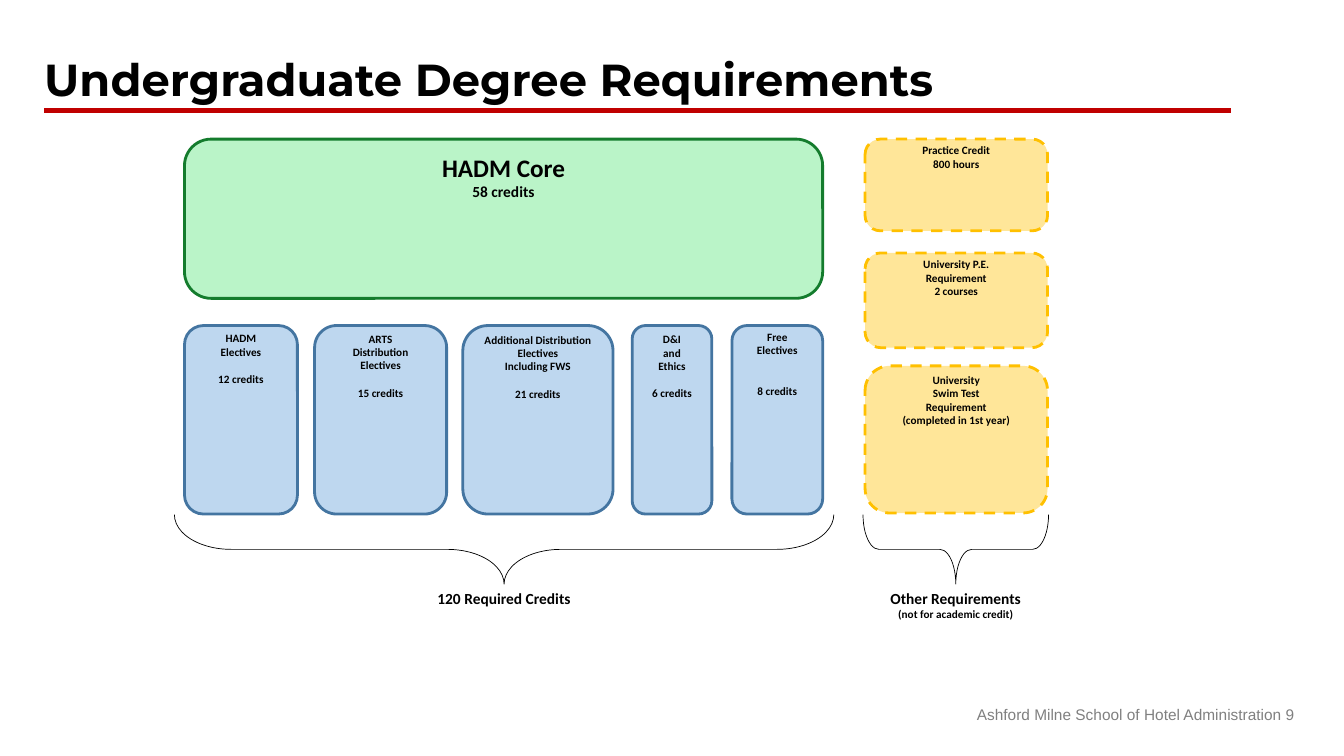
import pptx
import pptx.util
import pptx.dml.color
import pptx.enum.dml
import pptx.enum.shapes
import pptx.enum.text
from lxml import etree

Inches, Pt = pptx.util.Inches, pptx.util.Pt
RGBColor = pptx.dml.color.RGBColor
ALIGN = pptx.enum.text.PP_ALIGN
SHAPE = pptx.enum.shapes.MSO_SHAPE
DASH = pptx.enum.dml.MSO_LINE.DASH

BLACK = RGBColor(0x00, 0x00, 0x00)
WHITE = RGBColor(0xFF, 0xFF, 0xFF)
GRAY = RGBColor(0x80, 0x80, 0x80)
RED = RGBColor(0xC0, 0x00, 0x00)
GREEN_FILL, GREEN_LINE = RGBColor(0xBA, 0xF4, 0xC8), RGBColor(0x14, 0x7C, 0x2D)
BLUE_FILL, BLUE_LINE = RGBColor(0xBE, 0xD7, 0xEF), RGBColor(0x44, 0x75, 0xA1)
YELLOW_FILL, YELLOW_LINE = RGBColor(0xFF, 0xE6, 0x99), RGBColor(0xFF, 0xC0, 0x00)

# Content: a line of text is (text, size, space before in points)
TITLE = "Undergraduate Degree Requirements"
FOOTER = "Ashford Milne School of Hotel Administration 9"
CORE = [("HADM Core", 18, 0), ("58 credits", 11, 0)]
# left, width, text drop, name lines, credits, space above credits
ELECTIVES = [
    (1.83, 1.12, 0.06, ["HADM", "Electives"], "12 credits", 9.8),
    (3.12, 1.31, 0.06, ["ARTS", "Distribution", "Electives"], "15 credits", 9.8),
    (4.59, 1.49, 0.06, ["Additional Distribution", "Electives", "Including FWS"],
     "21 credits", 9.8),
    (6.27, 0.79, 0.07, ["D&I", "and", "Ethics"], "6 credits", 9.8),
    (7.26, 0.90, 0.04, ["Free", "Electives"], "8 credits", 19.6),
]
# top, height, lines
OTHERS = [
    (1.38, 0.91, ["Practice Credit", "800 hours"]),
    (2.51, 0.94, ["University P.E.", "Requirement", "2 courses"]),
    (3.63, 1.46, ["University", "Swim Test", "Requirement", "(completed in 1st year)"]),
]
# centre, width, curvature, caption lines
BRACES = [
    (5.0, 6.54, 0.816, [("120 Required Credits", 11, 0)]),
    (9.48, 1.84, 0.229, [("Other Requirements", 11, 0),
                         ("(not for academic credit)", 8, 0)]),
]

# Layout
CORNER = 0.167
CORNER_INSET = 0.293 * CORNER  # text inset of a rounded corner, per short side
ELECTIVE_TOP, ELECTIVE_HEIGHT = 3.23, 1.87
OTHER_LEFT, OTHER_WIDTH = 8.58, 1.81
BRACE_MIDDLE, BRACE_DEPTH = 5.45, 0.69
CAPTION_TOP, CAPTION_WIDTH, CAPTION_HEIGHT = 5.8, 2.86, 0.88

presentation = pptx.Presentation()
presentation.slide_width, presentation.slide_height = Inches(13.33), Inches(7.5)
slide = presentation.slides.add_slide(presentation.slide_layouts[6])


def apply(target, formats):
    for name, value in formats.items():
        setattr(target, name, value)


def write(shape, lines, align=ALIGN.CENTER, margins=(0, 0.04), **font):
    side, top = margins
    frame = shape.text_frame
    apply(frame, {"word_wrap": True, "vertical_anchor": pptx.enum.text.MSO_ANCHOR.TOP,
                  "margin_left": Inches(side), "margin_right": Inches(side),
                  "margin_top": Inches(top), "margin_bottom": Inches(0.04)})
    for index, (text, size, gap) in enumerate(lines):
        paragraph = frame.add_paragraph() if index else frame.paragraphs[0]
        apply(paragraph, {"alignment": align, "space_before": Pt(gap)})
        run = paragraph.add_run()
        run.text = text
        formats = {"name": "Calibri", "bold": True, "size": Pt(size)} | font
        run.font.color.rgb = formats.pop("color", BLACK)
        apply(run.font, formats)


def add_text(box, lines, **options):
    write(slide.shapes.add_textbox(*map(Inches, box)), lines, **options)


def add_outline(kind, box, fill, line, width, dash=None):
    shape = slide.shapes.add_shape(kind, *map(Inches, box))
    shape.shadow.inherit = False
    shape.fill.solid()
    shape.fill.fore_color.rgb = fill
    shape.line.color.rgb = line
    apply(shape.line, {"width": Pt(width), "dash_style": dash})
    return shape


def add_card(box, fill, line, lines, drop, dash=None):
    card = add_outline(SHAPE.ROUNDED_RECTANGLE, box, fill, line, 2, dash)
    card.adjustments[0] = CORNER
    write(card, lines, margins=(0, max(0, drop - CORNER_INSET * min(box[2:]))))


# Title, rule and footer
add_text((0.34, 0.46, 11, 0.64), [(TITLE, 32, 0)], align=ALIGN.LEFT,
         margins=(0.1, 0.05), name="Montserrat")
rule = slide.shapes.add_connector(pptx.enum.shapes.MSO_CONNECTOR.STRAIGHT,
                                  *map(Inches, (0.44, 1.1, 12.21, 1.1)))
rule.line.color.rgb = RED
rule.line.width = Pt(3.5)
etree.SubElement(rule.element.spPr, pptx.oxml.ns.qn("a:effectLst"))
add_text((4.42, 6.95, 8.52, 0.4), [(FOOTER, 11, 0)], align=ALIGN.RIGHT,
         margins=(0.1, 0.05), name="Arial", bold=False, color=GRAY)

# Braces with captions
for center, width, curvature, caption in BRACES:
    brace = add_outline(SHAPE.LEFT_BRACE,
                        (center - BRACE_DEPTH / 2, BRACE_MIDDLE - width / 2,
                         BRACE_DEPTH, width), WHITE, BLACK, 0.5)
    brace.rotation = 270
    brace.adjustments[0] = curvature
    add_text((center - CAPTION_WIDTH / 2, CAPTION_TOP, CAPTION_WIDTH, CAPTION_HEIGHT),
             caption)

# Credit cards: core, then electives
add_card((1.83, 1.38, 6.33, 1.58), GREEN_FILL, GREEN_LINE, CORE, 0.13)
for left, width, drop, names, credits, gap in ELECTIVES:
    lines = [(name, 8, 0) for name in names] + [(credits, 8, gap)]
    add_card((left, ELECTIVE_TOP, width, ELECTIVE_HEIGHT), BLUE_FILL, BLUE_LINE,
             lines, drop)

# Requirements without credit
for top, height, texts in OTHERS:
    add_card((OTHER_LEFT, top, OTHER_WIDTH, height), YELLOW_FILL, YELLOW_LINE,
             [(text, 8, 0) for text in texts], 0.04, DASH.DASH)

presentation.save("out.pptx")
